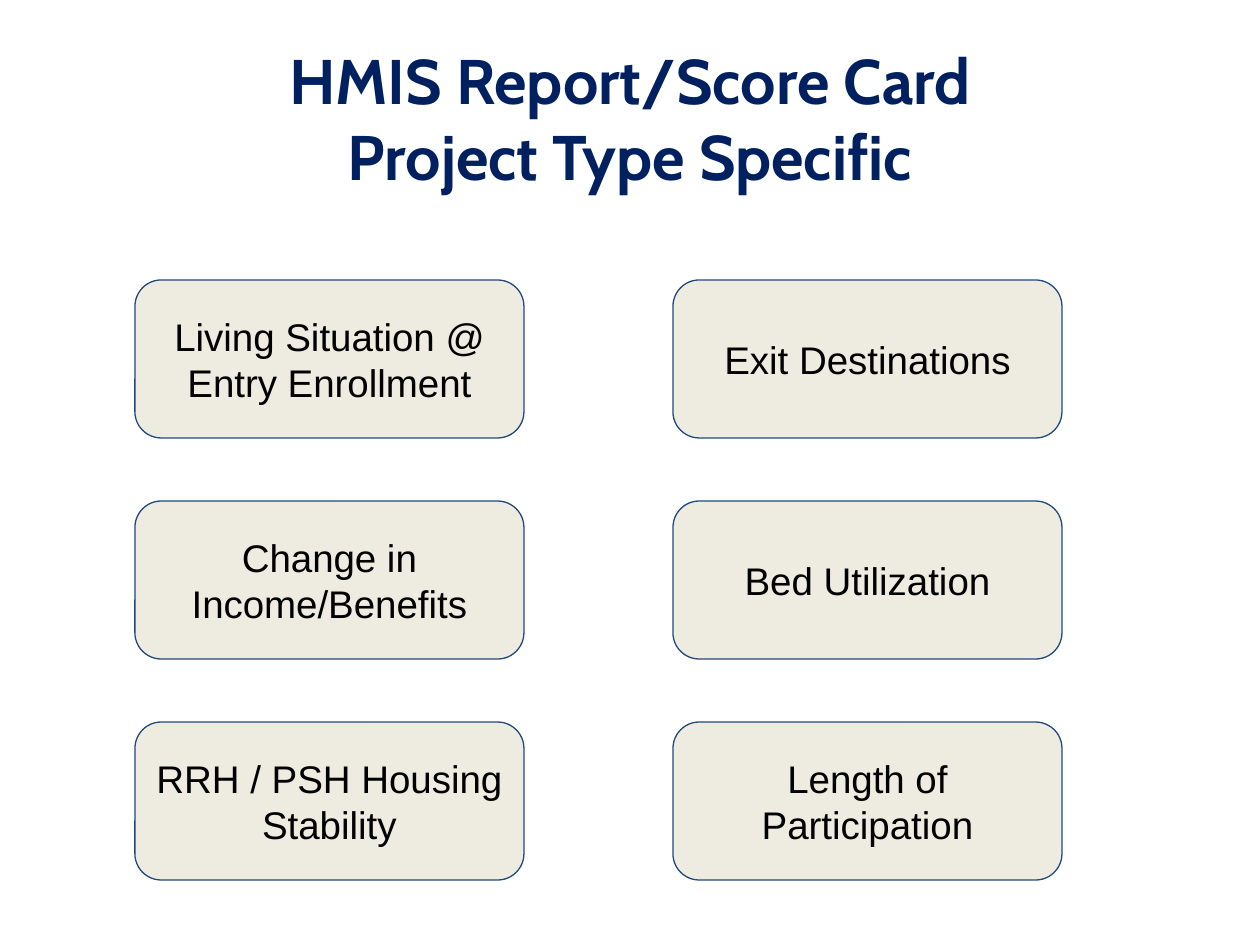
from pptx import Presentation
from pptx.dml.color import RGBColor
from pptx.enum.shapes import MSO_SHAPE
from pptx.enum.text import MSO_ANCHOR, PP_ALIGN
from pptx.util import Emu, Pt

ROUND = MSO_SHAPE.ROUNDED_RECTANGLE
MIDDLE = MSO_ANCHOR.MIDDLE
CENTER = PP_ALIGN.CENTER
SCALE = 914400 / 126

TITLE = ["HMIS Report/Score Card", "Project Type Specific"]
CARDS = [
    ["Living Situation @ Entry Enrollment", "Exit Destinations"],
    ["Change in Income/Benefits", "Bed Utilization"],
    ["RRH / PSH Housing Stability", "Length of Participation"],
]
LEFT, TOP = 135, 280
STEP_X, STEP_Y = 538, 221
WIDTH, HEIGHT = 389, 158


def px(count):
    """Turn pixels into EMU."""
    return Emu(round(count * SCALE))


def color(code):
    """Turn a hex string into a colour."""
    return RGBColor.from_string(code)


def write(frame, lines, size=22, font="Arial", ink="000000", bold=False, pad=13):
    """Fill a text frame with centred lines in one format."""
    frame.word_wrap = True
    frame.vertical_anchor = MIDDLE
    frame.margin_left = frame.margin_right = px(13)
    frame.margin_top = frame.margin_bottom = px(pad)
    for i, line in enumerate(lines):
        para = frame.add_paragraph() if i else frame.paragraphs[0]
        para.alignment = CENTER
        run = para.add_run()
        run.text = line
        run.font.size = Pt(size)
        run.font.name = font
        run.font.bold = bold
        run.font.color.rgb = color(ink)


def add_title(slide, lines):
    """Add the slide title."""
    box = slide.shapes.add_textbox(px(63), px(38), px(1134), px(158))
    write(box.text_frame, lines, size=36, font="Cabin", ink="002060",
          bold=True, pad=6)


def add_card(slide, text, x, y):
    """Add one rounded card with its label."""
    card = slide.shapes.add_shape(ROUND, px(x), px(y), px(WIDTH), px(HEIGHT))
    card.shadow.inherit = False
    card.fill.solid()
    card.fill.fore_color.rgb = color("EEECE1")
    card.line.color.rgb = color("1F497D")
    card.line.width = Pt(0.75)
    write(card.text_frame, [text])


def main():
    """Build and save the slide."""
    deck = Presentation()
    deck.slide_width, deck.slide_height = px(1260), px(945)
    slide = deck.slides.add_slide(deck.slide_layouts[6])
    add_title(slide, TITLE)
    for row, texts in enumerate(CARDS):
        for col, text in enumerate(texts):
            add_card(slide, text, LEFT + col * STEP_X, TOP + row * STEP_Y)
    deck.save("out.pptx")


if __name__ == "__main__":
    main()
